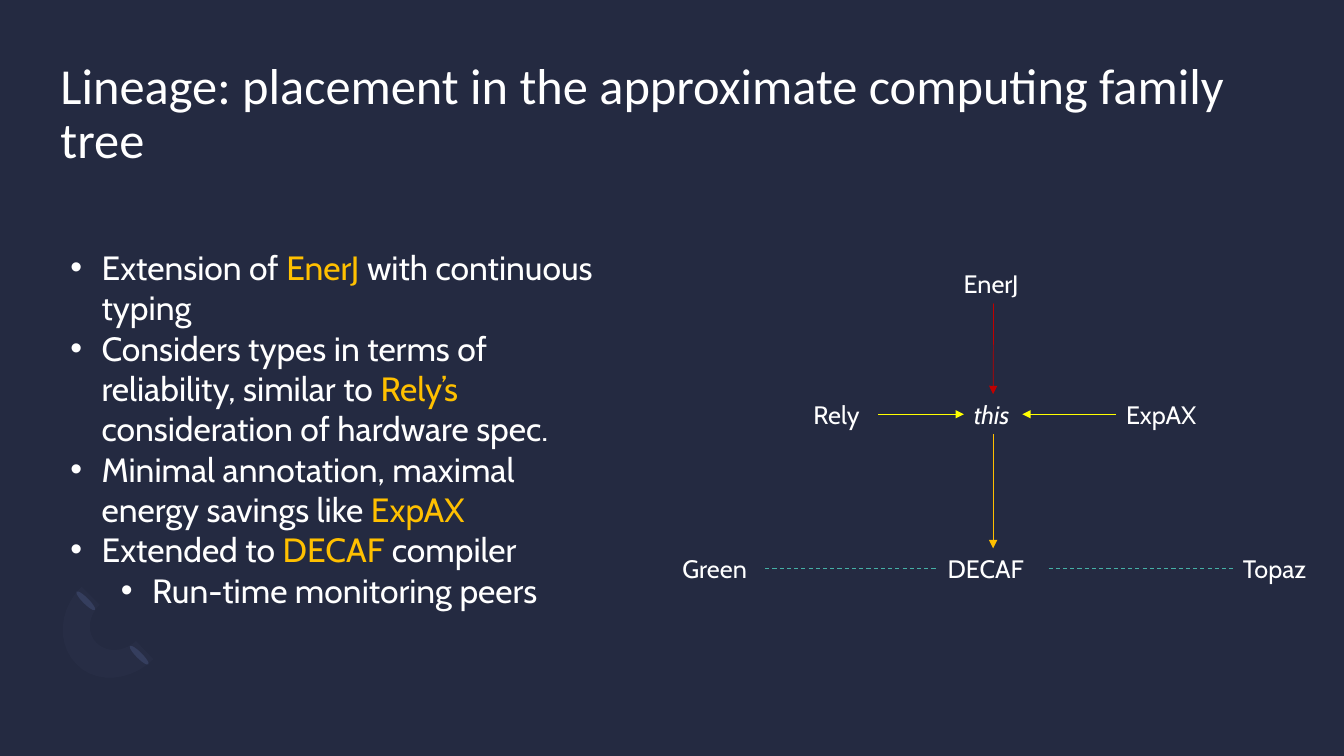
from lxml.etree import SubElement
from pptx import Presentation
from pptx.dml.color import RGBColor
from pptx.enum.dml import MSO_LINE
from pptx.enum.shapes import MSO_CONNECTOR, MSO_SHAPE
from pptx.enum.text import MSO_ANCHOR, MSO_AUTO_SIZE, PP_ALIGN
from pptx.oxml.ns import qn
from pptx.util import Inches, Pt

NAVY = RGBColor(0x24, 0x2A, 0x41)
SLATE = RGBColor(0x33, 0x3B, 0x5B)
PERIWINKLE = RGBColor(0x7B, 0x88, 0xB6)
WHITE = RGBColor(0xFF, 0xFF, 0xFF)
AMBER = RGBColor(0xFF, 0xC0, 0x00)
RED = RGBColor(0xC0, 0x00, 0x00)
YELLOW = RGBColor(0xFF, 0xFF, 0x00)
TEAL = RGBColor(0x45, 0xB0, 0xA6)
TOP, LEFT, BOTTOM, RIGHT = range(4)

NODES = {
    "EnerJ": (9.46, 2.61, 0.79),
    "ExpAX": (11.07, 3.91, 1.16),
    "Green": (6.67, 5.44, 0.92),
    "Rely": (7.97, 3.91, 0.74),
    "DECAF": (9.3, 5.44, 1.1),
    "Topaz": (12.23, 5.44, 0.87),
    "this": (9.56, 3.91, 0.58),
}
ARROWS = [
    ("EnerJ", BOTTOM, "this", TOP, RED),
    ("this", BOTTOM, "DECAF", TOP, AMBER),
    ("Rely", RIGHT, "this", LEFT, YELLOW),
    ("ExpAX", LEFT, "this", RIGHT, YELLOW),
]
PEERS = [("Green", "DECAF"), ("DECAF", "Topaz")]
POINTS = [
    (0, ["Extension of ", "EnerJ", " with continuous typing"]),
    (0, ["Considers types in terms of reliability, similar to ", "Rely’s",
         " consideration of hardware spec."]),
    (0, ["Minimal annotation, maximal energy savings like ", "ExpAX"]),
    (0, ["Extended to ", "DECAF", " compiler"]),
    (1, ["Run-time monitoring peers"]),
]
ARC = [
    [(0.76, 6.59), (0.56, 6.39), (0.58, 6.05), (0.81, 5.82)],
    [(0.99, 6), (0.87, 6.11), (0.86, 6.29), (0.96, 6.38)],
    [(0.96, 6.38), (1.06, 6.48), (1.23, 6.47), (1.35, 6.36)],
    [(1.52, 6.54), (1.3, 6.76), (0.95, 6.79), (0.76, 6.59)],
]


def bezier(curve, steps=10):
    """Return points along a cubic curve."""
    return [
        tuple((1 - t) ** 3 * a + 3 * t * (1 - t) ** 2 * b + 3 * t * t * (1 - t) * c + t ** 3 * d
              for a, b, c, d in zip(*curve))
        for t in (step / steps for step in range(steps + 1))
    ]


class LineageSlide:
    """Hold the style and the slide, and draw each kind of element."""

    def __init__(self, deck):
        self.slide = deck.slides.add_slide(deck.slide_layouts[5])
        self.shapes = self.slide.shapes
        self.font = "Cabin"
        self.slide.background.fill.solid()
        self.slide.background.fill.fore_color.rgb = NAVY

    def style(self, run, size, color=WHITE, font=None):
        run.font.name = font or self.font
        run.font.size = Pt(size)
        run.font.color.rgb = color

    def plain(self, shape, color):
        shape.shadow.inherit = False
        shape.fill.solid()
        shape.fill.fore_color.rgb = color
        shape.line.fill.background()

    def title(self, text):
        title = self.shapes.title
        title.left, title.top = Inches(0.6), Inches(0.6)
        title.width, title.height = Inches(12.13), Inches(1.46)
        frame = title.text_frame
        frame.text = text
        frame.word_wrap = True
        frame.auto_size = MSO_AUTO_SIZE.NONE
        frame.vertical_anchor = MSO_ANCHOR.TOP
        frame.margin_left = frame.margin_right = frame.margin_top = frame.margin_bottom = 0
        line = frame.paragraphs[0]
        line.alignment = PP_ALIGN.LEFT
        line.line_spacing = 0.9
        self.style(line.runs[0], 36, font="Calibri")

    def ellipse(self, left, top):
        petal = self.shapes.add_shape(MSO_SHAPE.OVAL, Inches(left), Inches(top),
                                      Inches(0.06), Inches(0.26))
        petal.rotation = 135
        self.plain(petal, SLATE)

    def arc(self, curves, alpha):
        outline = [(Inches(x), Inches(y)) for curve in curves for x, y in bezier(curve)]
        builder = self.shapes.build_freeform(*outline[0])
        builder.add_line_segments(outline[1:], close=True)
        arc = builder.convert_to_shape()
        self.plain(arc, PERIWINKLE)
        tint = arc._element.spPr.find(qn("a:solidFill"))[0]
        SubElement(tint, qn("a:alpha")).set("val", str(alpha * 1000))

    def box(self, left, top, width, height):
        box = self.shapes.add_textbox(Inches(left), Inches(top), Inches(width), Inches(height))
        box.text_frame.word_wrap = True
        box.text_frame.auto_size = MSO_AUTO_SIZE.SHAPE_TO_FIT_TEXT
        return box

    def node(self, text, left, top, width):
        node = self.box(left, top, width, 0.4)
        node.text_frame.text = text
        name = node.text_frame.paragraphs[0].runs[0]
        self.style(name, 18)
        if text == "this":
            name.font.italic = True
        return node

    def link(self, start, start_side, end, end_side, color, width=0.5, arrow=True):
        link = self.shapes.add_connector(MSO_CONNECTOR.STRAIGHT, 0, 0, 0, 0)
        link.begin_connect(start, start_side)
        link.end_connect(end, end_side)
        link.line.color.rgb = color
        link.line.width = Pt(width)
        if arrow:
            SubElement(link.line._get_or_add_ln(), qn("a:tailEnd")).set("type", "triangle")
        else:
            link.line.dash_style = MSO_LINE.DASH
        SubElement(link._element.spPr, qn("a:effectLst"))

    def bullets(self, points, left, top, width, height):
        frame = self.box(left, top, width, height).text_frame
        for index, (level, parts) in enumerate(points):
            point = frame.add_paragraph() if index else frame.paragraphs[0]
            point.level = level
            props = point._p.get_or_add_pPr()
            props.set("marL", str(Inches(0.31 + 0.5 * level)))
            props.set("indent", str(Inches(-0.31)))
            SubElement(props, qn("a:buFont")).set("typeface", "Arial")
            SubElement(props, qn("a:buChar")).set("char", "•")
            for order, part in enumerate(parts):
                run = point.add_run()
                run.text = part
                self.style(run, 24, AMBER if order % 2 else WHITE)


def main():
    deck = Presentation()
    deck.slide_width, deck.slide_height = Inches(13.33), Inches(7.5)
    lineage = LineageSlide(deck)
    lineage.ellipse(1.35, 6.37)
    lineage.ellipse(0.82, 5.83)
    lineage.arc(ARC, 4)
    lineage.title("Lineage: placement in the approximate computing family tree")
    nodes = {name: lineage.node(name, *place) for name, place in NODES.items()}
    for start, start_side, end, end_side, color in ARROWS:
        lineage.link(nodes[start], start_side, nodes[end], end_side, color)
    for start, end in PEERS:
        lineage.link(nodes[start], RIGHT, nodes[end], LEFT, TEAL, 0.75, arrow=False)
    lineage.bullets(POINTS, 0.6, 2.4, 5.49, 3.74)
    deck.save("out.pptx")


if __name__ == "__main__":
    main()
